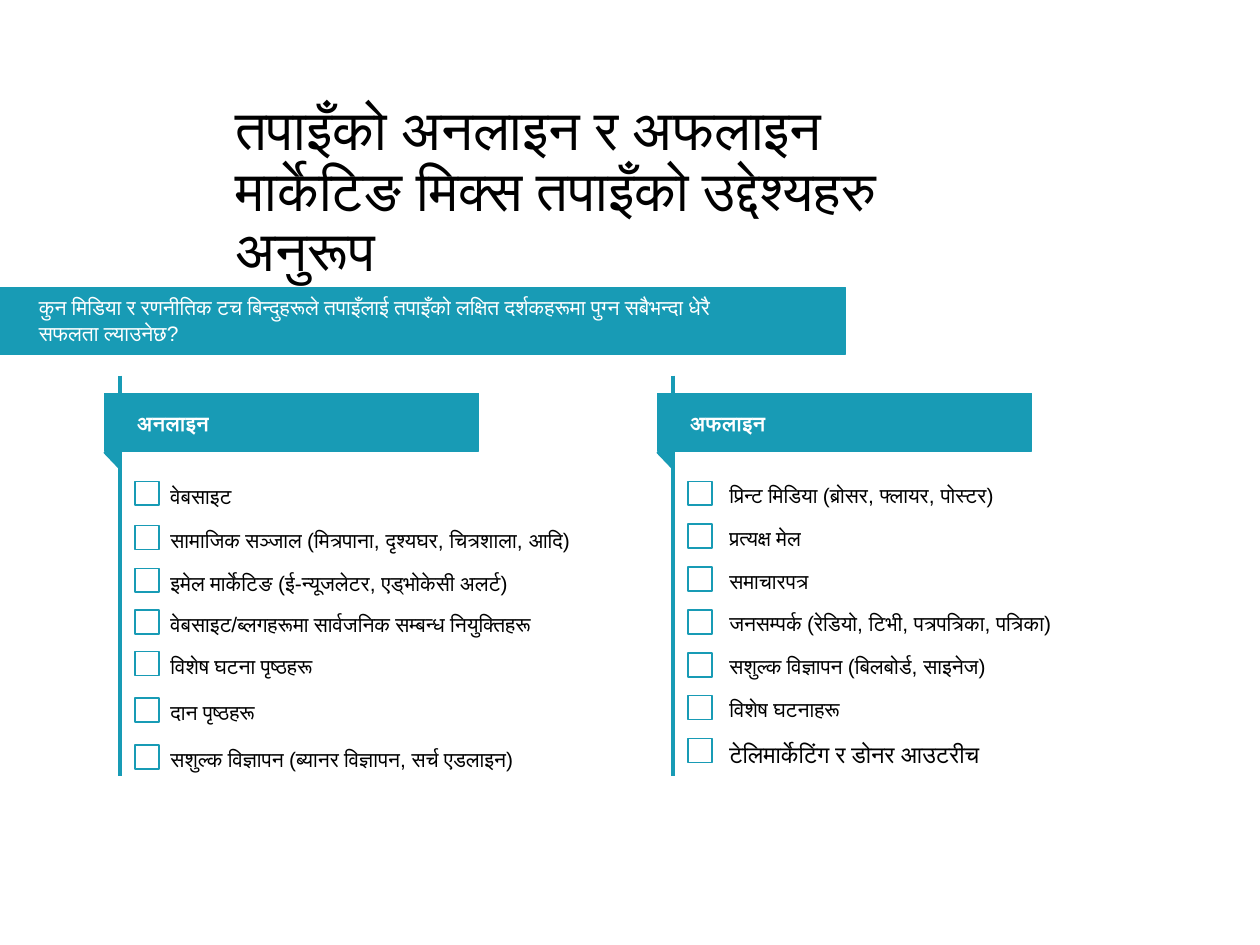
from lxml.etree import SubElement
from pptx import Presentation
from pptx.dml.color import RGBColor
from pptx.enum.shapes import MSO_CONNECTOR, MSO_SHAPE
from pptx.enum.text import MSO_ANCHOR, PP_ALIGN
from pptx.oxml.ns import qn
from pptx.util import Pt

COLORS = {"teal": "189BB5", "white": "FFFFFF", "black": "000000"}
ONLINE = [
    (0, 58, "वेबसाइट"),
    (25.2, 289, "सामाजिक सञ्जाल (मित्रपाना, दृश्यघर, चित्रशाला, आदि)"),
    (49.7, 278, "इमेल मार्केटिङ (ई-न्यूजलेटर, एड्भोकेसी अलर्ट)"),
    (73.4, 261, "वेबसाइट/ब्लगहरूमा सार्वजनिक सम्बन्ध नियुक्तिहरू"),
    (97.2, 130, "विशेष घटना पृष्ठहरू"),
    (123.8, 99, "दान पृष्ठहरू"),
    (150.5, 270, "सशुल्क विज्ञापन (ब्यानर विज्ञापन, सर्च एडलाइन)"),
]
OFFLINE = [(24.48 * i, width, text) for i, (width, text) in enumerate([
    (223, "प्रिन्ट मिडिया (ब्रोसर, फ्लायर, पोस्टर)"),
    (71, "प्रत्यक्ष मेल"),
    (71, "समाचारपत्र"),
    (310, "जनसम्पर्क (रेडियो, टिभी, पत्रपत्रिका, पत्रिका)"),
    (212, "सशुल्क विज्ञापन (बिलबोर्ड, साइनेज)"),
    (96, "विशेष घटनाहरू"),
    (221, "टेलिमार्केटिंग र डोनर आउटरीच"),
])]


def rgb(name):
    """Return the named colour."""
    return RGBColor.from_string(COLORS[name])


def add_block(s, x, y, w, h, kind=MSO_SHAPE.RECTANGLE, filled=True):
    """Add a teal shape, either filled or outlined only."""
    sp = s.shapes.add_shape(kind, Pt(x), Pt(y), Pt(w), Pt(h))
    sp.shadow.inherit = False
    if filled:
        sp.fill.solid()
        sp.fill.fore_color.rgb = rgb("teal")
    else:
        sp.fill.background()
    sp.line.color.rgb = rgb("teal")
    sp.line.width = Pt(0.75 if filled else 1)
    return sp


def write(sp, text, size=12, color="black", font="Arial", bold=False, anchor=MSO_ANCHOR.TOP):
    """Fill a shape with one left-aligned paragraph."""
    tf = sp.text_frame
    tf.word_wrap = True
    tf.vertical_anchor = anchor
    p = tf.paragraphs[0]
    p.text = text
    p.alignment = PP_ALIGN.LEFT
    p.font.size, p.font.name, p.font.bold = Pt(size), font, bold
    p.font.color.rgb = rgb(color)
    return p


def add_label(s, x, y, w, h, text, **style):
    """Add a text box holding one paragraph."""
    return write(s.shapes.add_textbox(Pt(x), Pt(y), Pt(w), Pt(h)), text, **style)


def add_title(s, x, y, w, h):
    """Add the slide title, centred vertically on its box."""
    p = add_label(s, x, y, w, h, "तपाइँको अनलाइन र अफलाइन मार्केटिङ मिक्स तपाइँको उद्देश्यहरु अनुरूप",
                  size=32, anchor=MSO_ANCHOR.MIDDLE)
    p.line_spacing = 0.9


def add_banner(s, x, y, w, h):
    """Add the question banner."""
    add_block(s, x, y, w, h)
    write(add_block(s, x + 15.1, y + 0.8, w - 83.5, h - 2),
          "कुन मिडिया र रणनीतिक टच बिन्दुहरूले तपाइँलाई तपाइँको लक्षित दर्शकहरूमा "
          "पुग्न सबैभन्दा धेरै सफलता ल्याउनेछ?", color="white")


def add_checklist(s, x, y, w, h, heading, items, indent, lift, last_size=12):
    """Add a ribbon heading on a pole with a checklist beside it."""
    fold = add_block(s, x + 0.7, y + 41.8, 12.2, 7.9, MSO_SHAPE.ISOSCELES_TRIANGLE)
    fold.rotation = 46.4
    add_block(s, x, y + 10.1, w, 33.1)
    pole = s.shapes.add_connector(
        MSO_CONNECTOR.STRAIGHT, Pt(x + 8.6), Pt(y), Pt(x + 8.6), Pt(y + h))
    pole.line.color.rgb = rgb("teal")
    pole.line.width = Pt(2.25)
    SubElement(pole._element.spPr, qn("a:effectLst"))
    write(add_block(s, x + 11.5, y + 16.6, 175, 18.7), heading,
          color="white", font="Calibri", bold=True)
    for i, (offset, width, text) in enumerate(items):
        top = y + 60.5 + offset
        size = last_size if i == len(items) - 1 else 12
        add_block(s, x + 17.3, top, 13.7, 13.7, filled=False)
        add_label(s, x + indent, top - lift, width, 21.8, text, size=size)


def main():
    """Build and save the slide."""
    prs = Presentation()
    prs.slide_width, prs.slide_height = Pt(720), Pt(540)
    s = prs.slides.add_slide(prs.slide_layouts[6])
    add_title(s, 127.4, 79.2, 447.8, 62.6)
    add_banner(s, 0, 164.2, 483.1, 38.2)
    add_checklist(s, 59.8, 214.6, 213.8, 229, "अनलाइन", ONLINE, 30.5, 2.5)
    add_checklist(s, 375.8, 214.6, 213.8, 229, "अफलाइन", OFFLINE, 33.9, 3, last_size=13.5)
    prs.save("out.pptx")


if __name__ == "__main__":
    main()
